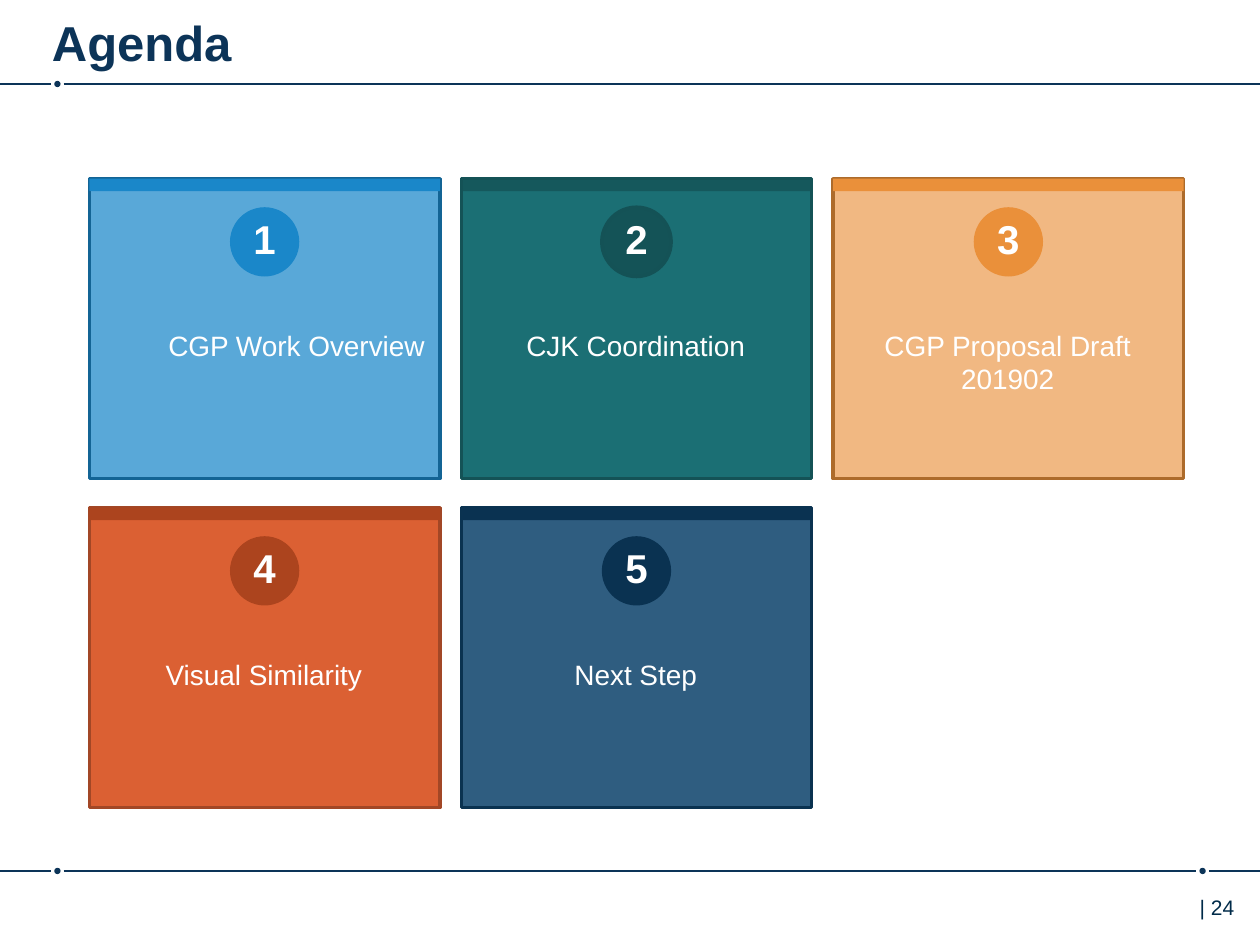
from dataclasses import dataclass

from lxml.etree import SubElement
from pptx import Presentation
from pptx.dml.color import RGBColor
from pptx.enum.shapes import MSO_CONNECTOR, MSO_SHAPE
from pptx.enum.text import MSO_ANCHOR, MSO_AUTO_SIZE, PP_ALIGN
from pptx.oxml.ns import qn
from pptx.util import Pt

SLIDE_WIDTH, SLIDE_HEIGHT = 720, 540


@dataclass(frozen=True)
class Theme:
    font: str = "Arial"
    navy: str = "0C3458"
    page_color: str = "002B49"
    white: str = "FFFFFF"
    title_size: float = 28
    number_size: float = 23
    label_size: float = 16
    page_size: float = 12


@dataclass(frozen=True)
class Card:
    label: str
    fill: str
    line: str
    accent: str
    opacity: int = 100
    bar_opacity: int = 100
    badge_line: str | None = None
    label_shift: float = 18


CARDS = [
    Card("CGP Work Overview", "1A87C9", "136495", "1A87C9", opacity=72, label_shift=36.7),
    Card("CJK Coordination", "1B6F74", "145256", "145357", bar_opacity=80, badge_line="145256"),
    Card("CGP Proposal Draft\n201902", "EA903A", "AD6B2B", "EA903A", opacity=63),
    Card("Visual Similarity", "DB6033", "A24726", "AC441E"),
    Card("Next Step", "0D436C", "0A3250", "0A3251", opacity=86),
]
COLUMNS = 3
GRID_LEFT, GRID_TOP = 51.1, 102.1
COLUMN_STEP, ROW_STEP = 212.5, 188
CARD_WIDTH, CARD_HEIGHT, BAR_HEIGHT = 200.2, 171.4, 7.2
BADGE_SIZE, BADGE_DROP = 39.6, 16.3
LABEL_WIDTH, LABEL_DROP = 163.4, 82

DOT_SIZE, DOT_GAP = 3.6, 3.6
DOT_LEFT, DOT_RIGHT = 32.8, 687.2


class SlideBuilder:
    def __init__(self, slide, theme):
        self.slide = slide
        self.theme = theme

    def shape(self, kind, left, top, width, height, fill, line=None, opacity=100):
        shape = self.slide.shapes.add_shape(kind, Pt(left), Pt(top), Pt(width), Pt(height))
        shape.shadow.inherit = False
        shape.fill.solid()
        shape.fill.fore_color.rgb = RGBColor.from_string(fill)
        if opacity < 100:
            color = shape.fill._xPr.find(qn("a:solidFill"))[0]
            SubElement(color, qn("a:alpha"), val=str(opacity * 1000))
        if line:
            shape.line.color.rgb = RGBColor.from_string(line)
            shape.line.width = Pt(2)
        else:
            shape.line.fill.background()

    def line(self, start, end, y):
        connector = self.slide.shapes.add_connector(
            MSO_CONNECTOR.STRAIGHT, Pt(start), Pt(y), Pt(end), Pt(y))
        connector.line.color.rgb = RGBColor.from_string(self.theme.navy)
        connector.line.width = Pt(1)
        SubElement(connector._element.spPr, qn("a:effectLst"))

    def dotted_rule(self, y, dots):
        """Draw a slide-wide rule that breaks around each dot centre."""
        start = 0
        for center in dots:
            self.line(start, center - DOT_GAP, y)
            self.shape(MSO_SHAPE.OVAL, center - DOT_SIZE / 2, y - DOT_SIZE / 2,
                       DOT_SIZE, DOT_SIZE, self.theme.navy)
            start = center + DOT_GAP
        self.line(start, SLIDE_WIDTH, y)

    def fill_text(self, shape, text, size, color, bold=False,
                  align=PP_ALIGN.CENTER, side_margin=7.2):
        frame = shape.text_frame
        frame.text = text
        frame_format = {
            "word_wrap": True,
            "auto_size": MSO_AUTO_SIZE.NONE,
            "vertical_anchor": MSO_ANCHOR.TOP,
            "margin_left": Pt(side_margin),
            "margin_right": Pt(side_margin),
            "margin_top": Pt(3.6),
            "margin_bottom": Pt(3.6),
        }
        for name, value in frame_format.items():
            setattr(frame, name, value)
        font_format = {"name": self.theme.font, "size": Pt(size), "bold": bold}
        for paragraph in frame.paragraphs:
            paragraph.alignment = align
            for run in paragraph.runs:
                for name, value in font_format.items():
                    setattr(run.font, name, value)
                run.font.color.rgb = RGBColor.from_string(color)

    def text(self, left, top, width, height, text, size, color, **options):
        box = self.slide.shapes.add_textbox(Pt(left), Pt(top), Pt(width), Pt(height))
        self.fill_text(box, text, size, color, **options)

    def title(self, text):
        title = self.slide.shapes.title
        place = {"left": 29.7, "top": 3.6, "width": 630.7, "height": 35.3}
        for name, value in place.items():
            setattr(title, name, Pt(value))
        self.fill_text(title, text, self.theme.title_size, self.theme.navy,
                       bold=True, align=PP_ALIGN.LEFT, side_margin=0)

    def card(self, index, card):
        row, column = divmod(index, COLUMNS)
        left = GRID_LEFT + column * COLUMN_STEP
        top = GRID_TOP + row * ROW_STEP
        self.shape(MSO_SHAPE.RECTANGLE, left, top, CARD_WIDTH, CARD_HEIGHT,
                   card.fill, card.line, card.opacity)
        self.shape(MSO_SHAPE.RECTANGLE, left, top, CARD_WIDTH, BAR_HEIGHT,
                   card.accent, opacity=card.bar_opacity)
        self.shape(MSO_SHAPE.OVAL, left + (CARD_WIDTH - BADGE_SIZE) / 2, top + BADGE_DROP,
                   BADGE_SIZE, BADGE_SIZE, card.accent, card.badge_line)
        self.text(left, top + 17, CARD_WIDTH, 35.3, str(index + 1),
                  self.theme.number_size, self.theme.white, bold=True)
        label_height = 26.6 + 19.4 * card.label.count("\n")
        self.text(left + card.label_shift, top + LABEL_DROP, LABEL_WIDTH, label_height,
                  card.label, self.theme.label_size, self.theme.white)

    def page_number(self, number):
        self.text(685.6, 507.6, 34.4, 28.8, f"| {number}", self.theme.page_size,
                  self.theme.page_color, align=PP_ALIGN.LEFT, side_margin=0)


def main():
    presentation = Presentation()
    presentation.slide_width = Pt(SLIDE_WIDTH)
    presentation.slide_height = Pt(SLIDE_HEIGHT)
    title_only = presentation.slide_layouts[5]
    builder = SlideBuilder(presentation.slides.add_slide(title_only), Theme())

    builder.title("Agenda")
    builder.dotted_rule(48, [DOT_LEFT])
    builder.dotted_rule(497.7, [DOT_LEFT, DOT_RIGHT])
    for index, card in enumerate(CARDS):
        builder.card(index, card)
    builder.page_number(24)
    presentation.save("out.pptx")


if __name__ == "__main__":
    main()
